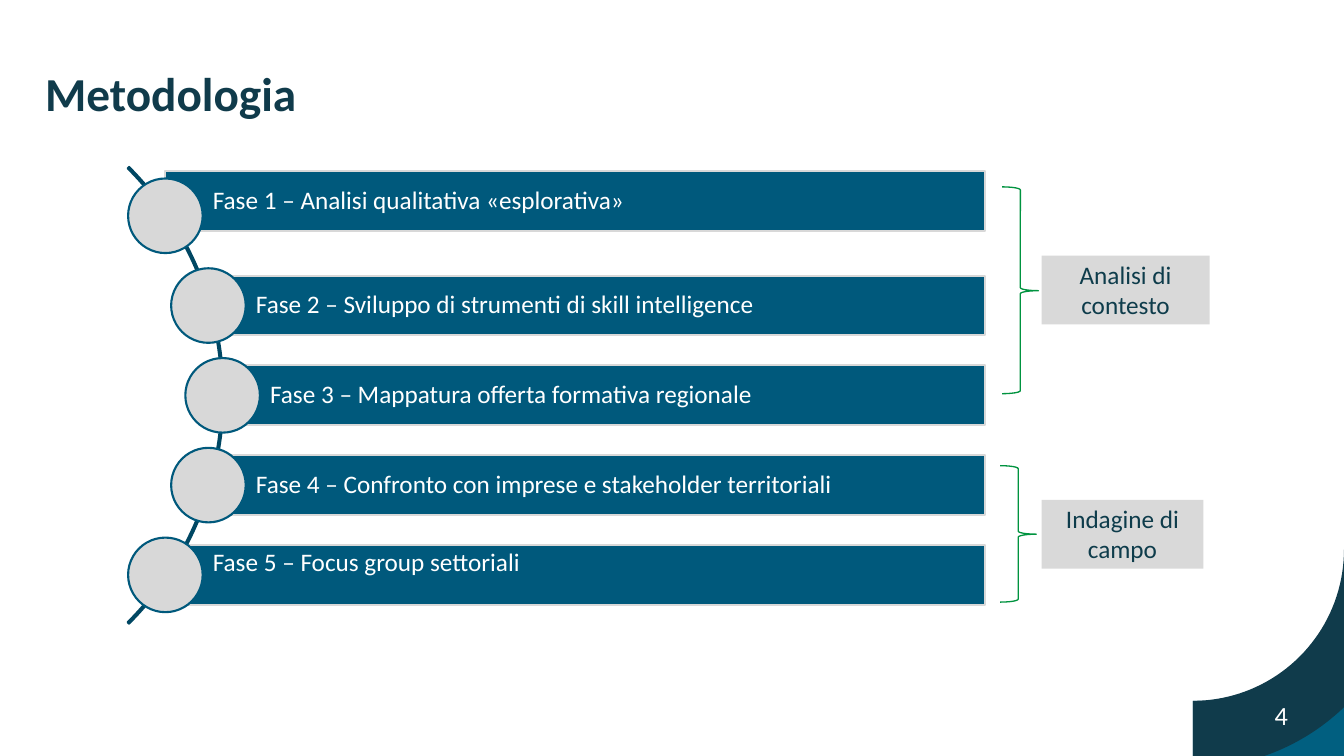
"""Build the methodology slide: five phases on an arc, grouped by two braces."""
import math

import pptx
import pptx.dml.color
import pptx.enum.shapes
import pptx.enum.text
import pptx.util

Pt = pptx.util.Pt
KIND = pptx.enum.shapes.MSO_SHAPE
ALIGN = pptx.enum.text.PP_ALIGN
ANCHOR = pptx.enum.text.MSO_ANCHOR

WIDTH, HEIGHT = 1280, 720
NAVY, TEAL, BLUE, GREY, WHITE = "103B4B", "015F80", "00597C", "D8D8D8", "FFFFFF"
ARC_LINE, GREEN, LABEL_FILL, LABEL_TEXT = "004763", "00933F", "D9D9D9", "0E3C4B"

TITLE = "Metodologia"
PAGE_NUMBER = "4"
PHASES = [
    {"text": "Fase 1 – Analisi qualitativa «esplorativa»", "left": 157.5, "lift": 14},
    {"text": "Fase 2 – Sviluppo di strumenti di skill intelligence", "left": 198.5},
    {"text": "Fase 3 – Mappatura offerta formativa regionale", "left": 212},
    {"text": "Fase 4 – Confronto con imprese e stakeholder territoriali", "left": 198.5},
    {"text": "Fase 5 – Focus group settoriali", "left": 157.5, "anchor": ANCHOR.TOP},
]
GROUPS = [
    {"text": "Analisi di contesto", "brace": (954.5, 178, 34.5, 197),
     "label": (992, 243.5, 160, 65.5)},
    {"text": "Indagine di campo", "brace": (952.5, 443.5, 34.5, 130),
     "label": (992, 476, 154, 65.5)},
]
BAR_RIGHT, BAR_HEIGHT, DOT, STEP = 938, 57, 71, 85.5
ARC_X, ARC_Y, ARC_RADIUS = -94.5, 376.5, 307.5
CORNER_X, CORNER_Y, INNER, OUTER = 1136, 523.5, 144, 208


def color(value):
    return pptx.dml.color.RGBColor.from_string(value)


def style(shape, fill=None, line=None, weight=2):
    shape.shadow.inherit = False
    if fill:
        shape.fill.solid()
        shape.fill.fore_color.rgb = color(fill)
    else:
        shape.fill.background()
    if line:
        shape.line.color.rgb = color(line)
        shape.line.width = Pt(weight)
    else:
        shape.line.fill.background()
    return shape


def add_shape(page, kind, area, adjust=(), **look):
    shape = page.shapes.add_shape(kind, *[Pt(length) for length in area])
    for index, value in enumerate(adjust):
        shape.adjustments[index] = value
    return style(shape, **look)


def write(box, text, size=24, ink=WHITE, bold=False, align=ALIGN.LEFT,
          anchor=ANCHOR.MIDDLE, insets=(7.2, 3.6, 7.2, 3.6), spacing=1):
    frame = box.text_frame
    frame.word_wrap = True
    frame.vertical_anchor = anchor
    frame.margin_left, frame.margin_top, frame.margin_right, frame.margin_bottom = [
        Pt(inset) for inset in insets]
    para = frame.paragraphs[0]
    para.alignment = align
    para.line_spacing = spacing
    span = para.add_run()
    span.text = text
    span.font.name = "Calibri"
    span.font.size = Pt(size)
    span.font.bold = bold
    span.font.color.rgb = color(ink)


def add_text(page, area, text, **options):
    box = page.shapes.add_textbox(*[Pt(length) for length in area])
    write(box, text, anchor=ANCHOR.TOP, insets=(1, 1, 0, 0), **options)


def arc_points(radius, start, end, steps=40):
    angles = [start + (end - start) * index / steps for index in range(steps + 1)]
    return [(CORNER_X + radius * math.cos(angle), CORNER_Y + radius * math.sin(angle))
            for angle in angles]


def add_corner(page):
    top = CORNER_Y + INNER
    add_shape(page, KIND.RECTANGLE, (CORNER_X, top, WIDTH - CORNER_X, HEIGHT - top), fill=TEAL)
    inner = arc_points(INNER, 0, math.pi / 2)
    outer = arc_points(OUTER, math.asin((HEIGHT - CORNER_Y) / OUTER),
                       math.acos((WIDTH - CORNER_X) / OUTER))
    outline = [(Pt(x), Pt(y)) for x, y in inner + [(CORNER_X, HEIGHT)] + outer]
    builder = page.shapes.build_freeform(*outline[0])
    builder.add_line_segments(outline[1:], close=True)
    style(builder.convert_to_shape(), fill=NAVY)


def add_phases(page):
    add_shape(page, KIND.BLOCK_ARC,
              (ARC_X - ARC_RADIUS, ARC_Y - ARC_RADIUS, 2 * ARC_RADIUS, 2 * ARC_RADIUS),
              adjust=(189, 27, 0.003), line=ARC_LINE)
    for index, phase in enumerate(PHASES):
        left = phase["left"]
        middle = ARC_Y + (index - (len(PHASES) - 1) / 2) * STEP
        top = middle - BAR_HEIGHT / 2 - phase.get("lift", 0)
        bar = add_shape(page, KIND.RECTANGLE, (left, top, BAR_RIGHT - left, BAR_HEIGHT),
                        fill=BLUE, line=GREY)
        write(bar, phase["text"], anchor=phase.get("anchor", ANCHOR.MIDDLE),
              insets=(45.2, 4.8, 4.8, 4.8), spacing=0.9)
        add_shape(page, KIND.OVAL, (left - DOT / 2, middle - DOT / 2, DOT, DOT),
                  fill=GREY, line=BLUE)


def add_groups(page):
    for group in GROUPS:
        add_shape(page, KIND.RIGHT_BRACE, group["brace"], adjust=(0.083, 0.502),
                  line=GREEN, weight=1.25)
        label = add_shape(page, KIND.RECTANGLE, group["label"], fill=LABEL_FILL)
        write(label, group["text"], ink=LABEL_TEXT, align=ALIGN.CENTER, anchor=ANCHOR.TOP)


def main():
    deck = pptx.Presentation()
    deck.slide_width, deck.slide_height = Pt(WIDTH), Pt(HEIGHT)
    page = deck.slides.add_slide(deck.slide_layouts[6])
    add_corner(page)
    add_text(page, (1213, 664.5, 27, 32), PAGE_NUMBER, size=25)
    add_text(page, (42, 60, 1073, 55.5), TITLE, size=45, ink=NAVY, bold=True)
    add_phases(page)
    add_groups(page)
    deck.save("out.pptx")


if __name__ == "__main__":
    main()
